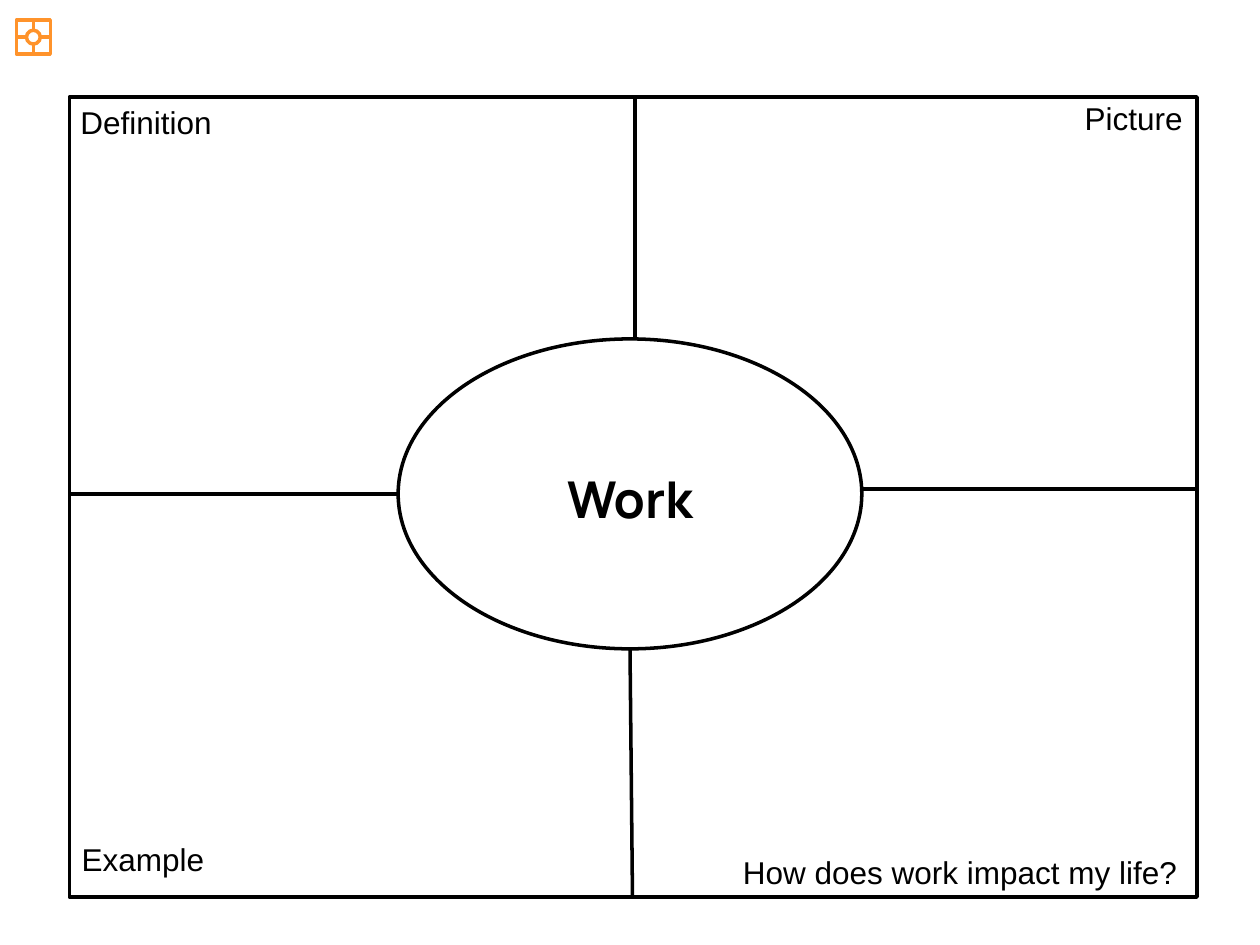
"""Build a four-square vocabulary organizer slide for the word Work."""
from lxml.etree import SubElement
from pptx import Presentation
from pptx.dml.color import RGBColor
from pptx.enum.shapes import MSO_CONNECTOR as Connector, MSO_SHAPE as Preset
from pptx.enum.text import MSO_AUTO_SIZE as AutoSize, PP_ALIGN as Align
from pptx.oxml.ns import qn
from pptx.util import Inches, Pt

COLORS = {"ink": "000000", "paper": "FFFFFF", "accent": "FF932B"}
COLUMNS, ROWS = 100, 75
LINE_WIDTH = 2

ORGANIZERS = [
    {"frame": (5.5, 7.7, 89.5, 63.5), "oval": (31.6, 26.9, 36.8, 24.6), "color": "ink",
     "top": (50.4, 50.4), "bottom": (50, 50.2), "left": 39.2, "right": 38.8},
    {"frame": (1.3, 1.6, 2.7, 2.7), "oval": (2.1, 2.4, 1.1, 1.1), "color": "accent",
     "top": (2.65, 2.65), "bottom": (2.65, 2.65), "left": 2.95, "right": 2.95},
]

LABELS = [
    ("Work", (32.7, 36.6, 34.6, 5.9), Align.CENTER, "Manrope", 29, True),
    ("Definition", (5.4, 7.7, 12.5, 4), Align.LEFT, "Arial", 18, False),
    ("Example", (5.5, 66.2, 11.8, 4), Align.LEFT, "Arial", 18, False),
    ("Picture", (85.1, 7.4, 9.9, 4), Align.LEFT, "Arial", 18, False),
    ("How does work impact my life?", (49.5, 67.2, 44.9, 4), Align.RIGHT, "Arial", 18, False),
]

deck = Presentation()
deck.slide_width, deck.slide_height = Inches(10), Inches(7.5)
page = deck.slides.add_slide(deck.slide_layouts[6])


def place(*lengths):
    units = (deck.slide_width / COLUMNS, deck.slide_height / ROWS)
    return [round(length * units[i % 2]) for i, length in enumerate(lengths)]


def rgb(name):
    return RGBColor.from_string(COLORS[name])


def style_line(item, color):
    item.line.color.rgb = rgb(color)
    item.line.width = Pt(LINE_WIDTH)


def add_outline(preset, area, color, fill=None):
    shape = page.shapes.add_shape(preset, *place(*area))
    shape.shadow.inherit = False
    style_line(shape, color)
    if fill:
        shape.fill.solid()
        shape.fill.fore_color.rgb = rgb(fill)
    else:
        shape.fill.background()


def add_spoke(start, end, color):
    spoke = page.shapes.add_connector(Connector.STRAIGHT, *place(*start, *end))
    style_line(spoke, color)
    SubElement(spoke._element.spPr, qn("a:effectLst"))


def add_organizer(organizer):
    color = organizer["color"]
    left, top, width, height = organizer["frame"]
    oval_left, oval_top, oval_width, oval_height = organizer["oval"]
    (top_outer, top_inner), (bottom_inner, bottom_outer) = organizer["top"], organizer["bottom"]
    spokes = [
        ((top_outer, top), (top_inner, oval_top)),
        ((bottom_inner, oval_top + oval_height), (bottom_outer, top + height)),
        ((left, organizer["left"]), (oval_left, organizer["left"])),
        ((oval_left + oval_width, organizer["right"]), (left + width, organizer["right"])),
    ]
    add_outline(Preset.RECTANGLE, organizer["frame"], color)
    for start, end in spokes:
        add_spoke(start, end, color)
    add_outline(Preset.OVAL, organizer["oval"], color, "paper")


def add_label(text, area, align, font, size, bold):
    box = page.shapes.add_textbox(*place(*area))
    frame = box.text_frame
    frame.word_wrap = True
    frame.auto_size = AutoSize.SHAPE_TO_FIT_TEXT
    para = frame.paragraphs[0]
    para.alignment = align
    span = para.add_run()
    span.text = text
    span.font.name, span.font.size, span.font.bold = font, Pt(size), bold
    span.font.color.rgb = rgb("ink")


for organizer in ORGANIZERS:
    add_organizer(organizer)
for label in LABELS:
    add_label(*label)
deck.save("out.pptx")
